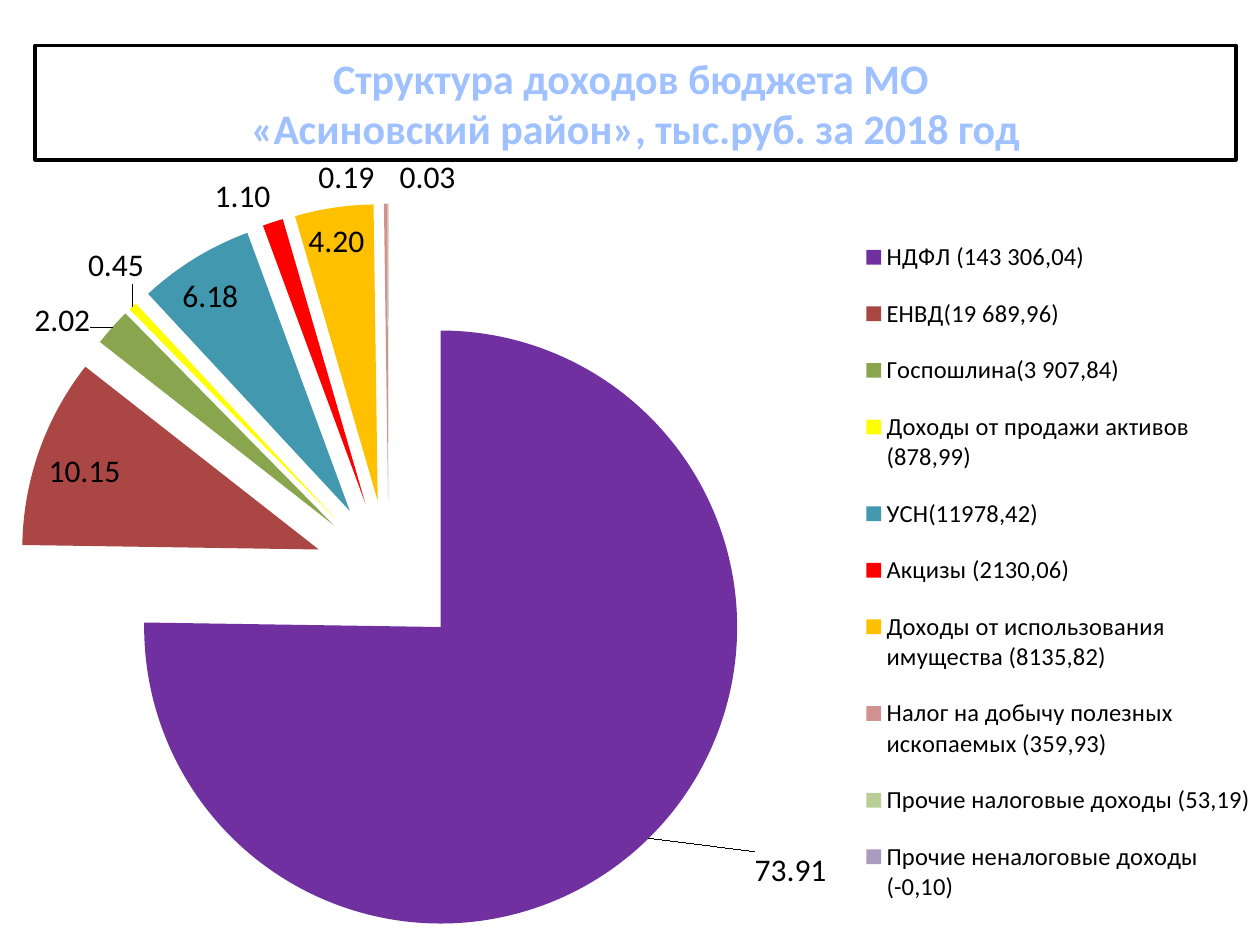
import pptx
import pptx.chart.data
import pptx.enum.chart
import pptx.enum.shapes
import pptx.enum.text
import pptx.oxml
import pptx.oxml.ns
import pptx.util
from pptx.dml.color import RGBColor
from pptx.util import Inches

HUES = {
    "ink": "000000", "paper": "FFFFFF", "title": "A0C1FF",
    "violet": "7030A0", "brick": "AA4643", "olive": "89A54E",
    "yellow": "FFFF00", "teal": "4198AF", "red": "FF0000",
    "amber": "FFC000", "pink": "D19392", "sage": "B9CD96", "lilac": "A99BBD",
}
INCOME = [
    ("НДФЛ (143 306,04)", 73.91, "violet"),
    ("ЕНВД(19 689,96)", 10.15, "brick"),
    ("Госпошлина(3 907,84)", 2.02, "olive"),
    ("Доходы от продажи активов (878,99)", 0.45, "yellow"),
    ("УСН(11978,42)", 6.18, "teal"),
    ("Акцизы (2130,06)", 1.10, "red"),
    ("Доходы от использования имущества (8135,82)", 4.20, "amber"),
    ("Налог на добычу полезных ископаемых (359,93)", 0.19, "pink"),
    ("Прочие налоговые доходы (53,19)", 0.03, "sage"),
    ("Прочие неналоговые доходы (-0,10)", 0, "lilac"),
]


class Deck:
    """Holds the style and the current slide."""

    def __init__(self, face="Calibri"):
        self.face = face
        self.file = pptx.Presentation()
        self.file.slide_width = Inches(10)
        self.file.slide_height = Inches(7.5)
        self.slide = self.file.slides.add_slide(self.file.slide_layouts[6])

    def hue(self, name):
        return RGBColor.from_string(HUES[name])

    def style(self, font, size, name="ink", bold=False):
        font.name = self.face
        font.size = pptx.util.Pt(size)
        font.bold = bold
        font.color.rgb = self.hue(name)

    def node(self, tag, inner="", attrs=""):
        space = pptx.oxml.ns.nsdecls("c")
        return pptx.oxml.parse_xml(f"<c:{tag} {space} {attrs}>{inner}</c:{tag}>")

    def layout(self, **parts):
        inner = "".join(f'<c:{key} val="{val}"/>' for key, val in parts.items())
        return self.node("layout", f"<c:manualLayout>{inner}</c:manualLayout>")

    def title(self, lines, *box):
        shape = self.slide.shapes.add_shape(
            pptx.enum.shapes.MSO_SHAPE.RECTANGLE, *map(Inches, box))
        shape.shadow.inherit = False
        shape.fill.solid()
        shape.fill.fore_color.rgb = self.hue("paper")
        shape.line.color.rgb = self.hue("ink")
        shape.line.width = pptx.util.Pt(2)
        frame = shape.text_frame
        frame.word_wrap = True
        frame.vertical_anchor = pptx.enum.text.MSO_ANCHOR.MIDDLE
        frame.text = "\n".join(lines)
        for para in frame.paragraphs:
            para.alignment = pptx.enum.text.PP_ALIGN.CENTER
            self.style(para.font, 24, "title", True)

    def pie(self, rows, *box):
        names, vals, hues = zip(*rows)
        data = pptx.chart.data.CategoryChartData()
        data.categories = names
        data.add_series("Series 1", vals)
        chart = self.slide.shapes.add_chart(
            pptx.enum.chart.XL_CHART_TYPE.PIE, *map(Inches, box), data).chart
        chart.has_title = False
        self.style(chart.font, 18)
        area = chart.plots[0]._element.getparent()
        for old in area.findall(pptx.oxml.ns.qn("c:layout")):
            area.remove(old)
        area.insert(0, self.layout(layoutTarget="inner", xMode="edge",
                                   yMode="edge", x=0, y=0.085, w=0.617, h=0.915))
        self.slices(chart.plots[0].series[0], hues)
        self.legend(chart)

    def slices(self, series, hues):
        for spot, name in enumerate(hues):
            fill = series.points[spot].format.fill
            fill.solid()
            fill.fore_color.rgb = self.hue(name)
        first = series._element.find(pptx.oxml.ns.qn("c:dPt"))
        first.addprevious(self.node("explosion", attrs='val="25"'))
        best = pptx.enum.chart.XL_LABEL_POSITION.BEST_FIT
        tags = series.data_labels
        tags.show_value = True
        tags.number_format = "#,##0.00"
        tags.number_format_is_linked = False
        tags.position = best
        self.style(tags.font, 18)
        main = series.points[0].data_label
        main.position = best
        self.style(main.font, 18)
        mark = tags._element.find(pptx.oxml.ns.qn("c:dLbl"))
        mark.insert(1, self.layout(x=0.08, y=0.01))

    def legend(self, chart):
        chart.has_legend = True
        key = chart.legend
        key.position = pptx.enum.chart.XL_LEGEND_POSITION.RIGHT
        key.include_in_layout = False
        self.style(key.font, 14)
        side = key._element.find(pptx.oxml.ns.qn("c:legendPos"))
        side.addnext(self.layout(xMode="edge", yMode="edge",
                                 x=0.68, y=0.1, w=0.32, h=0.88))


def main():
    deck = Deck()
    deck.pie(INCOME, 0, 1.07, 10, 6.43)
    deck.title(["Структура доходов бюджета МО ",
                "«Асиновский район», тыс.руб. за 2018 год"], 0.28, 0.36, 9.53, 0.91)
    deck.file.save("out.pptx")


if __name__ == "__main__":
    main()
